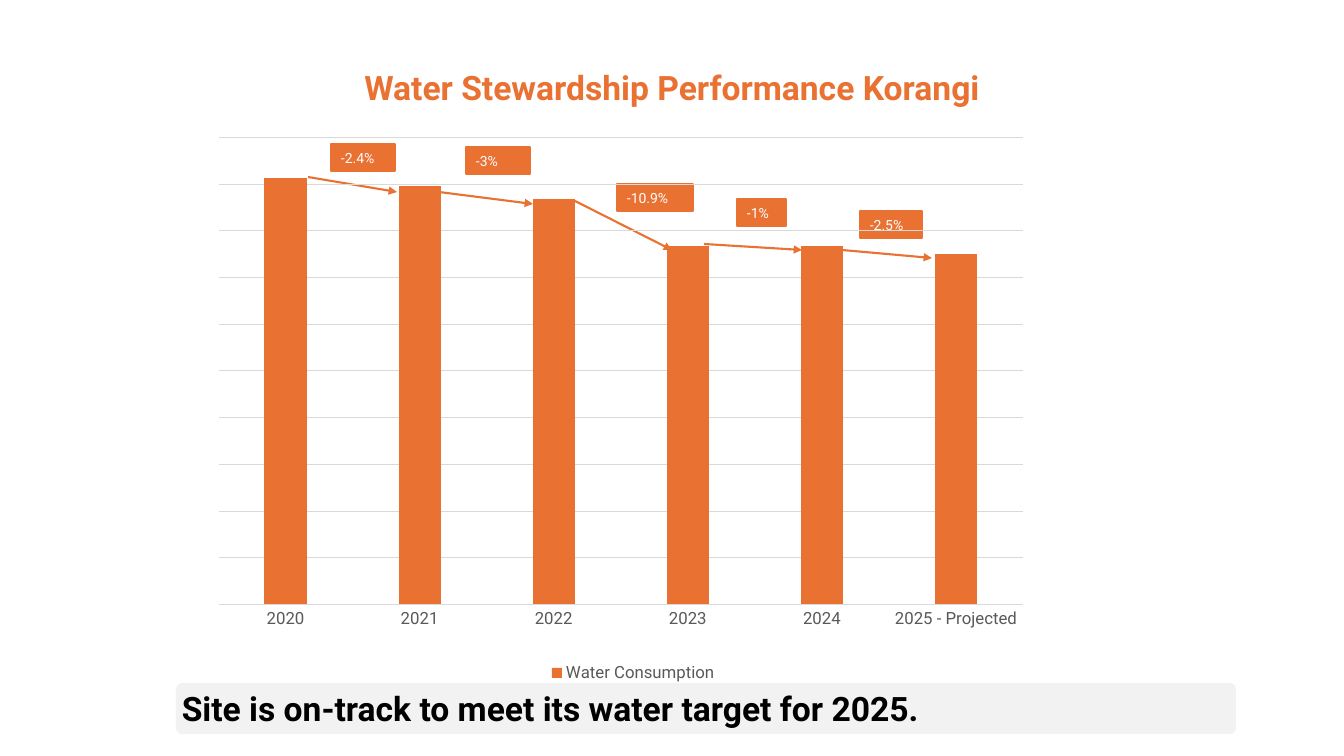
from lxml import etree
from pptx import Presentation
from pptx.chart.data import CategoryChartData
from pptx.dml.color import RGBColor
from pptx.enum.chart import XL_CHART_TYPE, XL_LEGEND_POSITION, XL_TICK_LABEL_POSITION, XL_TICK_MARK
from pptx.enum.shapes import MSO_CONNECTOR, MSO_SHAPE
from pptx.enum.text import MSO_ANCHOR, PP_ALIGN
from pptx.oxml import parse_xml
from pptx.oxml.ns import nsdecls, qn
from pptx.util import Emu, Pt

COLUMNS = XL_CHART_TYPE.COLUMN_CLUSTERED
LEGEND_BOTTOM = XL_LEGEND_POSITION.BOTTOM
NO_LABELS = XL_TICK_LABEL_POSITION.NONE
NO_TICKS = XL_TICK_MARK.NONE
STRAIGHT = MSO_CONNECTOR.STRAIGHT
RECTANGLE, ROUNDED = MSO_SHAPE.RECTANGLE, MSO_SHAPE.ROUNDED_RECTANGLE
MIDDLE = MSO_ANCHOR.MIDDLE
LEFT, CENTER = PP_ALIGN.LEFT, PP_ALIGN.CENTER

ORANGE = RGBColor(0xE9, 0x71, 0x32)
WHITE = RGBColor(0xFF, 0xFF, 0xFF)
BLACK = RGBColor(0, 0, 0)
PALE_GREY = RGBColor(0xF2, 0xF2, 0xF2)
GRID_GREY = RGBColor(0xD9, 0xD9, 0xD9)
TEXT_GREY = RGBColor(0x59, 0x59, 0x59)
FONT = "Roboto"

TITLE = "Water Stewardship Performance Korangi"
TITLE_BOX = (336, 62, 672, 50)
MESSAGE = "Site is on-track to meet its water target for 2025."
MESSAGE_BOX = (176, 683, 1060, 51)
CHART_BOX = (218, 137, 830, 550)
PLOT_LAYOUT = {"x": 0, "y": 0, "w": 0.97, "h": 0.85}
SERIES = "Water Consumption"
CONSUMPTION = {"2020": 100, "2021": 98, "2022": 95, "2023": 84, "2024": 84,
               "2025 - Projected": 82}
AXIS_MAX = 109.4
GRID_STEPS = 10
LABEL_HEIGHT = 27
# label, (left, top, width) of its box, arrow start, arrow end
CHANGES = [
    ("-2.4%", (331, 144, 64), (308, 177), (397, 192)),
    ("-3%", (466, 147, 64), (439, 192), (533, 204)),
    ("-10.9%", (617, 184, 76), (575, 201), (672, 250)),
    ("-1%", (737, 199, 49), (704, 244), (802, 250)),
    ("-2.5%", (860, 211, 62), (842, 250), (932, 258)),
]


def px(*lengths):
    return [Emu(round(length * 914400 / 100.8)) for length in lengths]


def set_font(font, size, color, bold=False):
    font.name, font.size, font.bold = FONT, Pt(size), bold
    font.color.rgb = color


def add_box(slide, kind, box, fill, text, size, color, bold=False):
    shape = slide.shapes.add_shape(kind, *px(*box))
    shape.shadow.inherit = False
    shape.fill.solid()
    shape.fill.fore_color.rgb = fill
    frame = shape.text_frame
    frame.word_wrap = True
    frame.vertical_anchor = MIDDLE
    paragraph = frame.paragraphs[0]
    paragraph.text = text
    paragraph.alignment = LEFT
    set_font(paragraph.font, size, color, bold)
    return shape


def add_arrow(slide, start, end):
    arrow = slide.shapes.add_connector(STRAIGHT, *px(*start, *end))
    arrow.line.color.rgb = ORANGE
    arrow.line.width = Pt(1.5)
    etree.SubElement(arrow.line._get_or_add_ln(), qn("a:tailEnd"), type="triangle")
    etree.SubElement(arrow._element.spPr, qn("a:effectLst"))


def add_consumption_chart(slide):
    data = CategoryChartData()
    data.categories = list(CONSUMPTION)
    data.add_series(SERIES, list(CONSUMPTION.values()))
    chart = slide.shapes.add_chart(COLUMNS, *px(*CHART_BOX), data).chart
    chart.has_title = False
    set_font(chart.font, 10, BLACK)
    chart.has_legend = True
    chart.legend.position = LEGEND_BOTTOM
    chart.legend.include_in_layout = False
    set_font(chart.legend.font, 12, TEXT_GREY)

    years = chart.category_axis
    years.major_tick_mark = years.minor_tick_mark = NO_TICKS
    years.format.line.color.rgb = GRID_GREY
    years.format.line.width = Pt(0.75)
    set_font(years.tick_labels.font, 12, TEXT_GREY)

    scale = chart.value_axis
    scale.minimum_scale, scale.maximum_scale = 0, AXIS_MAX
    scale.major_unit = AXIS_MAX / GRID_STEPS
    scale.tick_label_position = NO_LABELS
    scale.visible = False
    scale.major_gridlines.format.line.color.rgb = GRID_GREY
    scale.major_gridlines.format.line.width = Pt(0.75)

    plot = chart.plots[0]
    plot.gap_width, plot.overlap, plot.vary_by_categories = 219, -27, False
    columns = plot.series[0].format.fill
    columns.solid()
    columns.fore_color.rgb = ORANGE
    fix_plot_area(chart)


def fix_plot_area(chart):
    """Pin the inner plot area and leave the chart background clear."""
    space = chart._chartSpace
    plot_area = space.chart.plotArea
    for old in plot_area.findall(qn("c:layout")):
        plot_area.remove(old)
    layout = etree.Element(qn("c:layout"))
    manual = etree.SubElement(layout, qn("c:manualLayout"))
    settings = {"layoutTarget": "inner", "xMode": "edge", "yMode": "edge", **PLOT_LAYOUT}
    for tag, value in settings.items():
        etree.SubElement(manual, qn(f"c:{tag}"), val=str(value))
    plot_area.insert(0, layout)
    space.chart.addnext(parse_xml(
        f'<c:spPr {nsdecls("c", "a")}><a:noFill/><a:ln><a:noFill/></a:ln></c:spPr>'))


def main():
    prs = Presentation()
    prs.slide_width, prs.slide_height = px(1344, 756)
    slide = prs.slides.add_slide(prs.slide_layouts[5])

    title = slide.shapes.title
    title.left, title.top, title.width, title.height = px(*TITLE_BOX)
    title.text_frame.text = TITLE
    heading = title.text_frame.paragraphs[0]
    heading.alignment = CENTER
    set_font(heading.font, 24, ORANGE, bold=True)

    for label, box, start, end in CHANGES:
        add_arrow(slide, start, end)
        tag = add_box(slide, RECTANGLE, (*box, LABEL_HEIGHT), ORANGE, label, 10, WHITE)
        tag.line.color.rgb = ORANGE
        tag.line.width = Pt(1.5)

    message = add_box(slide, ROUNDED, MESSAGE_BOX, PALE_GREY, MESSAGE, 24, BLACK, bold=True)
    message.adjustments[0] = 0.12
    message.line.fill.background()
    frame = message.text_frame
    frame.margin_left = frame.margin_right = frame.margin_top = frame.margin_bottom = px(4)[0]

    add_consumption_chart(slide)
    prs.save("out.pptx")


if __name__ == "__main__":
    main()
